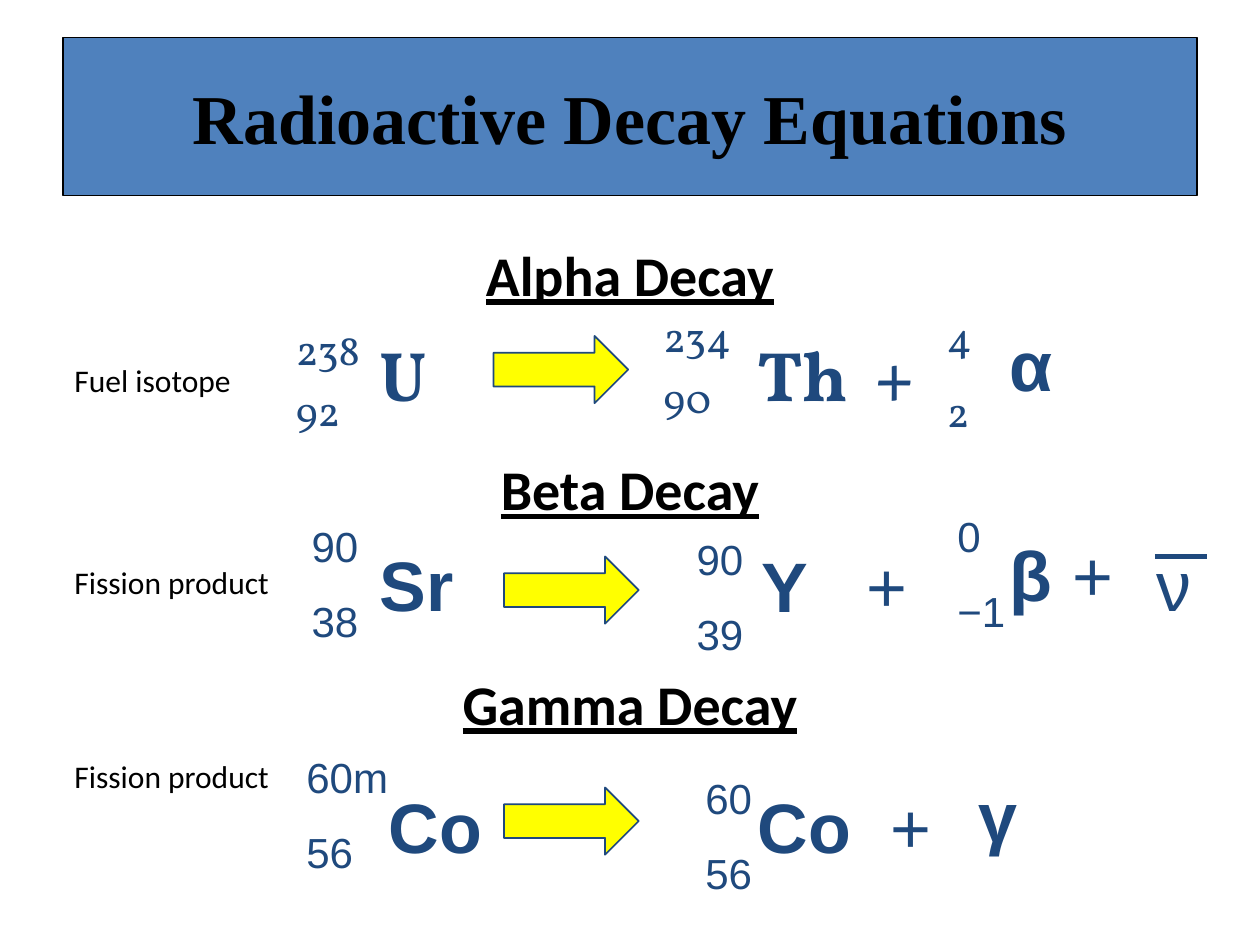
"""Build a slide of alpha, beta and gamma decay equations."""
from dataclasses import dataclass

from lxml import etree
from pptx import Presentation
from pptx.dml.color import RGBColor
from pptx.enum import shapes, text
from pptx.oxml.ns import qn
from pptx.util import Pt


@dataclass(frozen=True)
class Theme:
    ink: RGBColor = RGBColor(0x00, 0x00, 0x00)
    banner: RGBColor = RGBColor(0x4F, 0x81, 0xBD)
    symbol: RGBColor = RGBColor(0x1F, 0x49, 0x7D)
    arrow: RGBColor = RGBColor(0xFF, 0xFF, 0x00)
    title_size: int = 40
    heading_size: int = 32
    symbol_size: int = 40
    number_size: int = 24
    label_size: int = 18
    title_font: str = "Times New Roman"
    body_font: str = "Calibri"


@dataclass(frozen=True)
class Numbers:
    left: float
    top: float
    mass: str
    charge: str
    gap: float = 14


@dataclass(frozen=True)
class Symbol:
    left: float
    top: float
    name: str
    bold: bool = True


@dataclass(frozen=True)
class Decay:
    heading: str
    label: str
    label_top: float
    font: str
    arrow: tuple[float, float]
    numbers: list[Numbers]
    symbols: list[Symbol]


THEME = Theme()
LABEL_LEFT = 35.5
HEADING_GAP = 88
DECAYS = [
    Decay(
        "Alpha Decay", "Fuel isotope", 203, "Vollkorn", (282, 192),
        [Numbers(162, 181.5, "238", "92", 6), Numbers(372, 174, "234", "90", 6),
         Numbers(534, 174, "4", "2")],
        [Symbol(210, 186, "U"), Symbol(426, 186, "Th"), Symbol(493, 186, "+"),
         Symbol(570, 180, "α")],
    ),
    Decay(
        "Beta Decay", "Fission product", 318, "Arial", (288, 318),
        [Numbers(171, 294, "90", "38"), Numbers(391, 301.5, "90", "39"),
         Numbers(540, 288, "0", "−1")],
        [Symbol(210, 306, "Sr"), Symbol(428, 306.5, "Y"), Symbol(488, 306.5, "+", False),
         Symbol(570, 300, "β"), Symbol(606, 300, "+", False), Symbol(654, 306, "ν", False)],
    ),
    Decay(
        "Gamma Decay", "Fission product", 429, "Arial", (288, 450),
        [Numbers(168, 426, "60m", "56"), Numbers(396, 438, "60", "56")],
        [Symbol(215, 444, "Co"), Symbol(426, 444, "Co"), Symbol(502, 444, "+", False),
         Symbol(552, 438, "γ")],
    ),
]


def apply(target, values: dict) -> None:
    for name, value in values.items():
        setattr(target, name, value)


def place(shape, left: float, top: float, width: float, height: float) -> None:
    apply(shape, {"left": Pt(left), "top": Pt(top), "width": Pt(width), "height": Pt(height)})


def write(paragraph, words: str, color: RGBColor, **values) -> None:
    run = paragraph.add_run()
    run.text = words
    apply(run.font, values)
    run.font.color.rgb = color


def add_title(slide) -> None:
    title = slide.shapes.title
    place(title, 36, 21.6, 648, 90)
    title.fill.solid()
    title.fill.fore_color.rgb = THEME.banner
    title.line.color.rgb = THEME.ink
    title.line.width = Pt(0.75)
    title.text_frame.vertical_anchor = text.MSO_ANCHOR.MIDDLE
    paragraph = title.text_frame.paragraphs[0]
    paragraph.alignment = text.PP_ALIGN.CENTER
    write(paragraph, "Radioactive Decay Equations", THEME.ink,
          name=THEME.title_font, size=Pt(THEME.title_size), bold=True)


def add_headings(slide) -> None:
    body = slide.placeholders[1]
    place(body, 54, 138, 612, 366)
    frame = body.text_frame
    for index, decay in enumerate(DECAYS):
        paragraph = frame.add_paragraph() if index else frame.paragraphs[0]
        apply(paragraph, {"alignment": text.PP_ALIGN.CENTER, "line_spacing": 0.9,
                          "space_before": Pt(HEADING_GAP if index else 0)})
        properties = paragraph._p.get_or_add_pPr()
        properties.set("marL", "0")
        properties.set("indent", "0")
        etree.SubElement(properties, qn("a:buNone"))
        write(paragraph, decay.heading, THEME.ink, name=THEME.body_font,
              size=Pt(THEME.heading_size), bold=True, underline=True)


def add_lines(slide, left: float, top: float, width: float, height: float,
              lines: list[str], color: RGBColor, gap: float = 0, **values) -> None:
    box = slide.shapes.add_textbox(Pt(left), Pt(top), Pt(width), Pt(height))
    frame = box.text_frame
    frame.word_wrap = True
    for index, line in enumerate(lines):
        paragraph = frame.add_paragraph() if index else frame.paragraphs[0]
        paragraph.space_before = Pt(gap if index else 0)
        write(paragraph, line, color, **values)


def add_arrow(slide, left: float, top: float) -> None:
    arrow = slide.shapes.add_shape(
        shapes.MSO_SHAPE.RIGHT_ARROW, Pt(left), Pt(top), Pt(77), Pt(38.4))
    arrow.shadow.inherit = False
    arrow.fill.solid()
    arrow.fill.fore_color.rgb = THEME.arrow
    arrow.line.color.rgb = THEME.symbol
    arrow.line.width = Pt(1)


def add_antineutrino_bar(slide) -> None:
    bar = slide.shapes.add_connector(
        shapes.MSO_CONNECTOR.STRAIGHT, Pt(660), Pt(318), Pt(690), Pt(318))
    bar.line.color.rgb = THEME.symbol
    bar.line.width = Pt(3)
    etree.SubElement(bar._element.spPr, qn("a:effectLst"))


def add_equation(slide, decay: Decay) -> None:
    add_lines(slide, LABEL_LEFT, decay.label_top, 127, 29, [decay.label], THEME.ink,
              name=THEME.body_font, size=Pt(THEME.label_size))
    add_arrow(slide, *decay.arrow)
    for item in decay.numbers:
        add_lines(slide, item.left, item.top, 72, 79, [item.mass, item.charge], THEME.symbol,
                  item.gap, name=decay.font, size=Pt(THEME.number_size))
    for item in decay.symbols:
        font = "Arial" if item.name == "α" else decay.font
        add_lines(slide, item.left, item.top, 72 if len(item.name) > 1 else 48, 55.4,
                  [item.name], THEME.symbol, name=font, size=Pt(THEME.symbol_size),
                  bold=item.bold)


def main() -> None:
    presentation = Presentation()
    apply(presentation, {"slide_width": Pt(720), "slide_height": Pt(540)})
    slide = presentation.slides.add_slide(presentation.slide_layouts[1])
    add_title(slide)
    add_headings(slide)
    for decay in DECAYS:
        add_equation(slide, decay)
    add_antineutrino_bar(slide)
    presentation.save("out.pptx")


if __name__ == "__main__":
    main()
